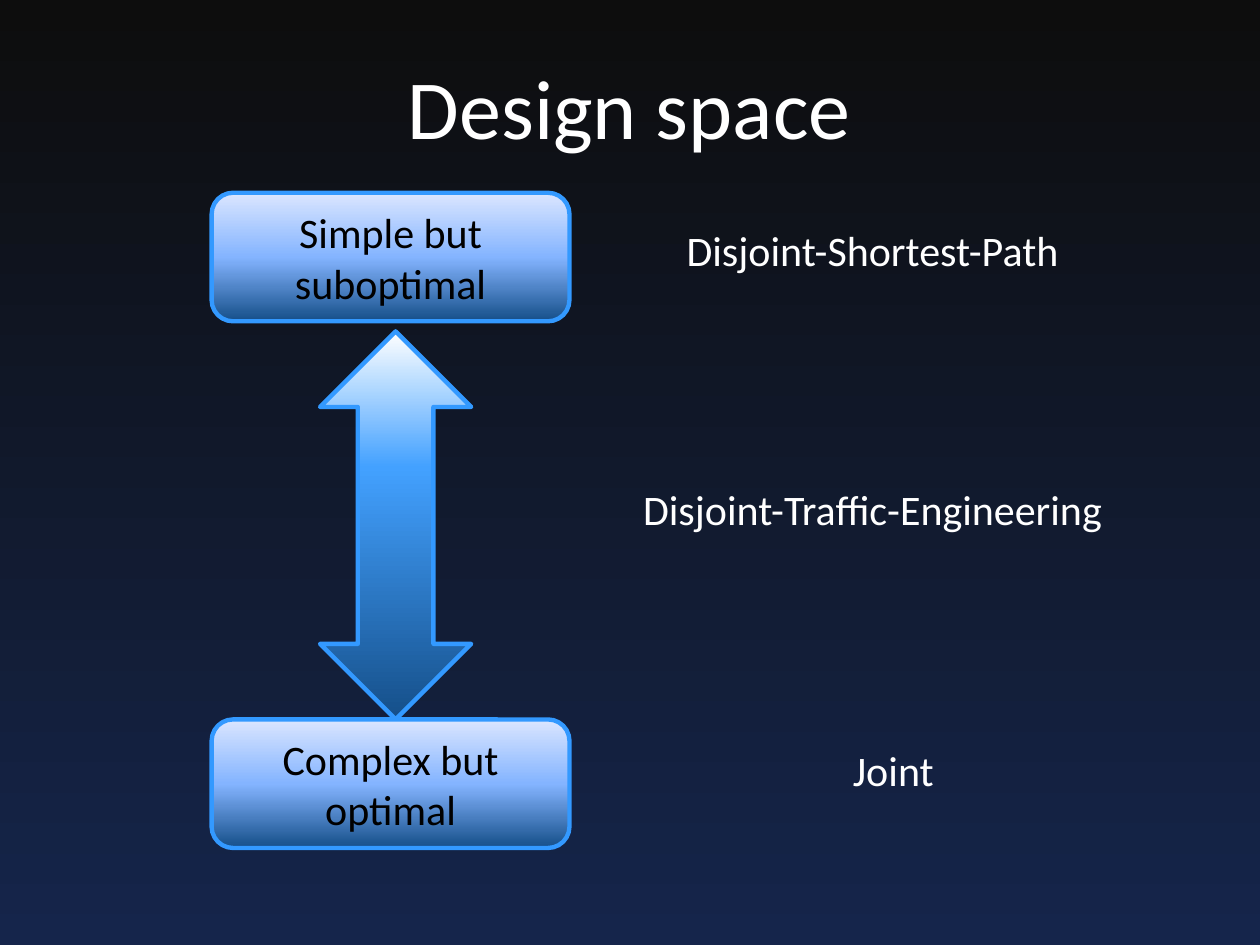
from lxml.etree import SubElement
from pptx import Presentation
from pptx.dml.color import RGBColor
from pptx.enum.shapes import MSO_SHAPE as Preset
from pptx.enum.text import MSO_ANCHOR as Anchor, MSO_AUTO_SIZE as AutoSize, PP_ALIGN as Align
from pptx.oxml.ns import qn
from pptx.util import Inches, Pt

COLORS = {
    "night": "0D0D0D", "navy": "15254B", "deep": "154F89", "sky": "43A1FF",
    "soft": "84B4FF", "pale": "DBE6FF", "outline": "3399FF",
    "white": "FFFFFF", "black": "000000",
}


def write(shape, text, size=24, color="white", anchor=Anchor.TOP, wrap=True):
    frame = shape.text_frame
    frame.word_wrap = wrap
    frame.auto_size = AutoSize.NONE if wrap else AutoSize.SHAPE_TO_FIT_TEXT
    frame.vertical_anchor = anchor
    paragraph = frame.paragraphs[0]
    paragraph.alignment = Align.CENTER
    run = paragraph.add_run()
    run.text = text
    run.font.name = "Calibri"
    run.font.size = Pt(size)
    run.font.color.rgb = RGBColor.from_string(COLORS[color])


def set_gradient(owner, fill, angle, stops):
    """Fill with (percent, color) stops; the angle runs counter-clockwise."""
    fill.gradient()
    fill.gradient_angle = angle
    stop_list = next(owner.element.iter(qn("a:gsLst")))
    for old_stop in list(stop_list):
        stop_list.remove(old_stop)
    for percent, color in stops:
        stop = SubElement(stop_list, qn("a:gs"), pos=str(percent * 1000))
        SubElement(stop, qn("a:srgbClr"), val=COLORS[color])


presentation = Presentation()
presentation.slide_width = Inches(10)
presentation.slide_height = Inches(7.5)
slide = presentation.slides.add_slide(presentation.slide_layouts[5])
set_gradient(slide, slide.background.fill, 270, [(0, "night"), (100, "navy")])

title = slide.shapes.title
title.left, title.top = Inches(0.7), Inches(0.49)
title.width, title.height = Inches(8.59), Inches(0.8)
write(title, "Design space", size=48, anchor=Anchor.BOTTOM)

# Scale from simple to complex
arrow_stops = [(0, "deep"), (65, "sky"), (100, "white")]
box_stops = [(0, "deep"), (50, "soft"), (100, "pale")]
for preset, left, top, width, height, stops, text in [
    (Preset.UP_DOWN_ARROW, 2.54, 2.63, 1.2, 3.08, arrow_stops, None),
    (Preset.ROUNDED_RECTANGLE, 1.68, 1.53, 2.84, 1.02, box_stops, "Simple but suboptimal"),
    (Preset.ROUNDED_RECTANGLE, 1.68, 5.71, 2.84, 1.02, box_stops, "Complex but optimal"),
]:
    shape = slide.shapes.add_shape(preset, Inches(left), Inches(top), Inches(width), Inches(height))
    shape.shadow.inherit = False
    set_gradient(shape, shape.fill, 90, stops)
    shape.line.color.rgb = RGBColor.from_string(COLORS["outline"])
    shape.line.width = Pt(2.5)
    if text:
        write(shape, text, color="black", anchor=Anchor.MIDDLE)

# Approaches along the scale
for text, left, top, width in [
    ("Disjoint-Shortest-Path", 5.26, 1.73, 3.33),
    ("Disjoint-Traffic-Engineering", 4.92, 3.79, 4.01),
    ("Joint", 6.65, 5.86, 0.88),
]:
    label = slide.shapes.add_textbox(Inches(left), Inches(top), Inches(width), Inches(0.5))
    write(label, text, wrap=False)

presentation.save("out.pptx")
